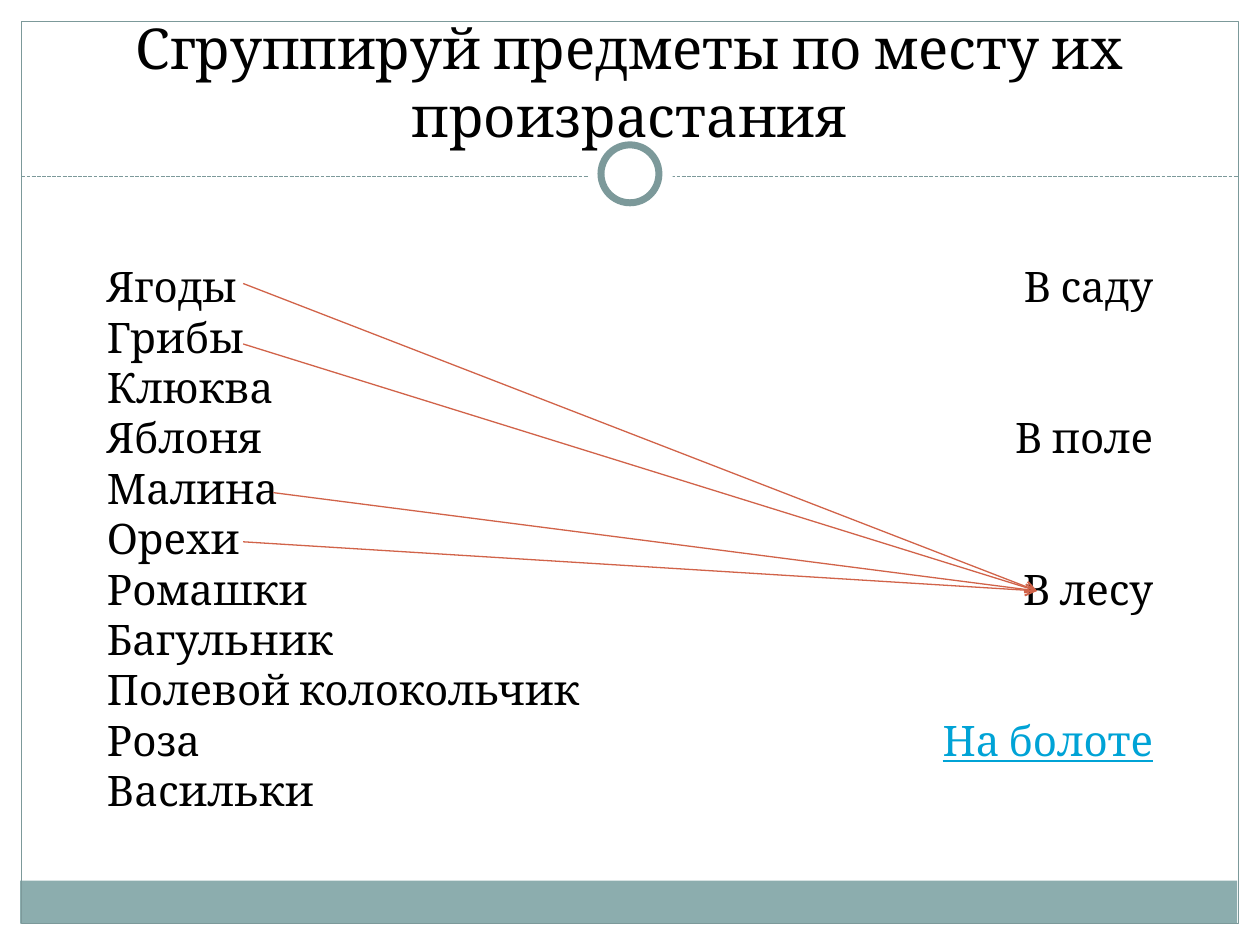
import pptx
import pptx.util
import pptx.dml.color
import pptx.enum.dml
import pptx.enum.shapes
import pptx.enum.text
import pptx.oxml.ns
import lxml.etree

SHAPE = pptx.enum.shapes.MSO_SHAPE
ALIGN = pptx.enum.text.PP_ALIGN
ANCHOR = pptx.enum.text.MSO_ANCHOR
DASH = pptx.enum.dml.MSO_LINE

WHITE, BLACK = "FFFFFF", "000000"
TEAL, BAND, RED, BLUE = "7C999A", "8CADAE", "D16349", "00A3D6"


def color(hex_string):
    return pptx.dml.color.RGBColor.from_string(hex_string)


class Page:
    columns, rows = 100, 75
    font = "Cambria"
    line_pitch = 28.8

    def __init__(self, deck):
        self.deck = deck
        self.slide = deck.slides.add_slide(deck.slide_layouts[6])

    def place(self, column, row):
        return (round(self.deck.slide_width * column / self.columns),
                round(self.deck.slide_height * row / self.rows))

    def shape(self, kind, area, fill=None, line=None, width=0.75):
        box = self.slide.shapes.add_shape(
            kind, *self.place(*area[:2]), *self.place(*area[2:]))
        box.shadow.inherit = False
        if fill:
            box.fill.solid()
            box.fill.fore_color.rgb = color(fill)
        else:
            box.fill.background()
        if line:
            box.line.color.rgb = color(line)
            box.line.width = pptx.util.Pt(width)
        else:
            box.line.fill.background()
        return box

    def line(self, start, end, stroke, dash=None, arrow=False):
        connector = self.slide.shapes.add_connector(
            pptx.enum.shapes.MSO_CONNECTOR.STRAIGHT,
            *self.place(*start), *self.place(*end))
        connector.line.color.rgb = color(stroke)
        connector.line.width = pptx.util.Pt(0.75)
        if dash:
            connector.line.dash_style = dash
        qn = pptx.oxml.ns.qn
        if arrow:
            lxml.etree.SubElement(
                connector.line._get_or_add_ln(), qn("a:tailEnd"), type="arrow")
        lxml.etree.SubElement(connector._element.spPr, qn("a:effectLst"))

    def text(self, area, lines, size, align=ALIGN.LEFT, anchor=ANCHOR.TOP,
             pitch=None, gap_lines=0):
        box = self.slide.shapes.add_textbox(
            *self.place(*area[:2]), *self.place(*area[2:]))
        frame = box.text_frame
        frame.word_wrap = True
        frame.vertical_anchor = anchor
        for index, words in enumerate(lines):
            para = frame.add_paragraph() if index else frame.paragraphs[0]
            para.text = words
            para.alignment = align
            para.font.name = self.font
            para.font.size = pptx.util.Pt(size)
            para.font.color.rgb = color(BLACK)
            if pitch:
                para.line_spacing = pptx.util.Pt(pitch)
            if index and gap_lines:
                para.space_before = pptx.util.Pt(gap_lines * pitch)
        return frame


def main():
    deck = pptx.Presentation()
    deck.slide_width = pptx.util.Inches(10)
    deck.slide_height = pptx.util.Inches(7.5)
    page = Page(deck)

    page.shape(SHAPE.RECTANGLE, (1.6, 69.9, 96.6, 3.4), fill=BAND)
    page.shape(SHAPE.RECTANGLE, (1.7, 1.7, 96.6, 71.6), line=TEAL)
    page.line((1.7, 14), (98.3, 14), TEAL, dash=DASH.SQUARE_DOT)
    page.shape(SHAPE.OVAL, (46.7, 10.5, 6.7, 6.7), fill=WHITE)
    page.shape(SHAPE.OVAL, (47.7, 11.5, 4.6, 4.6), fill=WHITE, line=TEAL, width=4)

    page.text((3.3, 1.3, 93.3, 11),
              ["Сгруппируй предметы по месту их произрастания"],
              32.2, ALIGN.CENTER, ANCHOR.BOTTOM)

    plants = ["Ягоды", "Грибы", "Клюква", "Яблоня", "Малина", "Орехи", "Ромашки",
              "Багульник", "Полевой колокольчик", "Роза", "Васильки"]
    places = ["В саду", "В поле", "В лесу", "На болоте"]
    page.text((7.5, 20.2, 42.5, 53.5), plants, 24, pitch=page.line_pitch)
    answers = page.text((50, 20.2, 42.5, 53.5), places, 24, ALIGN.RIGHT,
                        pitch=page.line_pitch, gap_lines=2)
    swamp = answers.paragraphs[-1].font
    swamp.color.rgb = color(BLUE)
    swamp.underline = True

    forest = (82.3, 46.9)
    for start in [(19.3, 22.5), (19.3, 27.3), (19.3, 43), (21.7, 39.1)]:
        page.line(start, forest, RED, arrow=True)

    deck.save("out.pptx")


if __name__ == "__main__":
    main()
